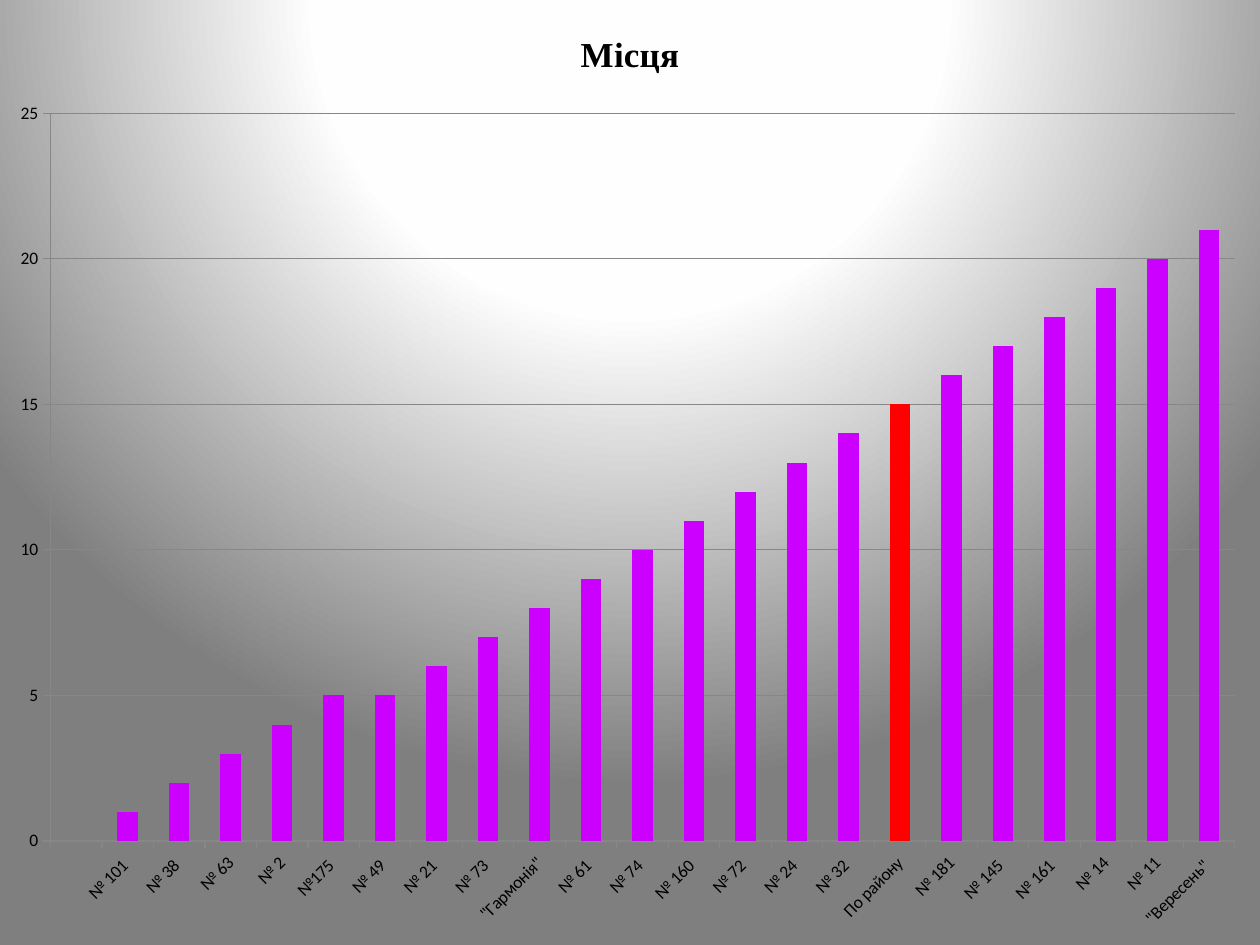
from dataclasses import dataclass

from pptx import Presentation
from pptx.chart.data import CategoryChartData
from pptx.dml.color import RGBColor
from pptx.enum.chart import XL_CHART_TYPE as ChartType, XL_TICK_MARK as TickMark
from pptx.oxml import parse_xml
from pptx.oxml.ns import nsdecls, qn
from pptx.util import Inches, Pt


@dataclass(frozen=True)
class Theme:
    text: RGBColor = RGBColor(0, 0, 0)
    school: RGBColor = RGBColor(0xCC, 0x00, 0xFF)
    district: RGBColor = RGBColor(0xFF, 0x00, 0x00)
    rule: RGBColor = RGBColor(0x87, 0x87, 0x87)
    glow: tuple = ((0, "FFFFFF"), (40, "FEFEFE"), (100, "7F7F7F"))
    label_font: str = "Calibri"
    title_font: str = "Times New Roman"
    label_size: Pt = Pt(10)
    title_size: Pt = Pt(20)


THEME = Theme()
TITLE = "Місця"
DISTRICT = "По району"
PLACES = [
    ("", None), ("№ 101 ", 1), ("№ 38 ", 2), ("№ 63", 3), ("№ 2", 4),
    ("№175 ", 5), ("№ 49 ", 5), ("№ 21 ", 6), ("№ 73 ", 7),
    ('"Гармонія"', 8), ("№ 61 ", 9), ("№ 74 ", 10), ("№ 160 ", 11),
    ("№ 72 ", 12), ("№ 24 ", 13), ("№ 32 ", 14), (DISTRICT, 15),
    ("№ 181", 16), ("№ 145 ", 17), ("№ 161 ", 18), ("№ 14", 19),
    ("№ 11", 20), ('"Вересень" ', 21),
]


def paint_background(slide):
    stops = "".join(
        f'<a:gs pos="{percent * 1000}"><a:srgbClr val="{color}"/></a:gs>'
        for percent, color in THEME.glow
    )
    background = parse_xml(
        f'<p:bg {nsdecls("p", "a")}><p:bgPr><a:gradFill rotWithShape="1">'
        f'<a:gsLst>{stops}</a:gsLst><a:path path="circle">'
        '<a:fillToRect l="50000" t="-80000" r="50000" b="180000"/></a:path>'
        '</a:gradFill><a:effectLst/></p:bgPr></p:bg>'
    )
    slide.element.find(qn("p:cSld")).insert(0, background)


def place_plot(chart, x, y, w, h):
    plot_area = chart.element.find(".//" + qn("c:plotArea"))
    for automatic in plot_area.findall(qn("c:layout")):
        plot_area.remove(automatic)
    plot_area.insert(0, parse_xml(
        f'<c:layout {nsdecls("c")}><c:manualLayout><c:layoutTarget val="inner"/>'
        '<c:xMode val="edge"/><c:yMode val="edge"/>'
        f'<c:x val="{x}"/><c:y val="{y}"/><c:w val="{w}"/><c:h val="{h}"/>'
        '</c:manualLayout></c:layout>'
    ))


def style_axis(axis):
    axis.major_tick_mark = TickMark.OUTSIDE
    axis.minor_tick_mark = TickMark.NONE
    axis.format.line.color.rgb = THEME.rule
    axis.format.line.width = Pt(0.75)
    labels = axis.tick_labels.font
    labels.name, labels.size = THEME.label_font, THEME.label_size
    labels.color.rgb = THEME.text


def add_places_chart(slide, left, top, width, height):
    data = CategoryChartData()
    data.categories = [school for school, _ in PLACES]
    data.add_series(TITLE, [place for _, place in PLACES])
    chart = slide.shapes.add_chart(
        ChartType.COLUMN_CLUSTERED, left, top, width, height, data
    ).chart
    chart.has_legend = False
    chart.font.name, chart.font.size = THEME.label_font, THEME.label_size
    chart.font.color.rgb = THEME.text

    chart.has_title = True
    chart.chart_title.include_in_layout = False
    heading = chart.chart_title.text_frame
    heading.text = TITLE
    heading_font = heading.paragraphs[0].font
    heading_font.name, heading_font.size = THEME.title_font, THEME.title_size
    heading_font.bold = True
    heading_font.color.rgb = THEME.text

    schools, scale = chart.category_axis, chart.value_axis
    for axis in (schools, scale):
        style_axis(axis)
    schools.tick_labels.font.bold = False
    schools._element.find(qn("c:txPr")).find(qn("a:bodyPr")).set("rot", "-2700000")
    scale.minimum_scale, scale.maximum_scale, scale.major_unit = 0, 25, 5
    scale.has_major_gridlines = True
    scale.major_gridlines.format.line.color.rgb = THEME.rule
    scale.major_gridlines.format.line.width = Pt(0.75)

    bars = chart.plots[0]
    bars.gap_width = 150
    bars.vary_by_categories = False
    places = bars.series[0]
    places.invert_if_negative = False
    places.format.fill.solid()
    places.format.fill.fore_color.rgb = THEME.school
    district_index = [school for school, _ in PLACES].index(DISTRICT)
    district = places.points[district_index].format.fill
    district.solid()
    district.fore_color.rgb = THEME.district
    place_plot(chart, 0.04, 0.12, 0.94, 0.77)


def main():
    deck = Presentation()
    deck.slide_width, deck.slide_height = Inches(10), Inches(7.5)
    slide = deck.slides.add_slide(deck.slide_layouts[6])
    paint_background(slide)
    add_places_chart(slide, Inches(0), Inches(0), Inches(10), Inches(7.5))
    deck.save("out.pptx")


if __name__ == "__main__":
    main()
